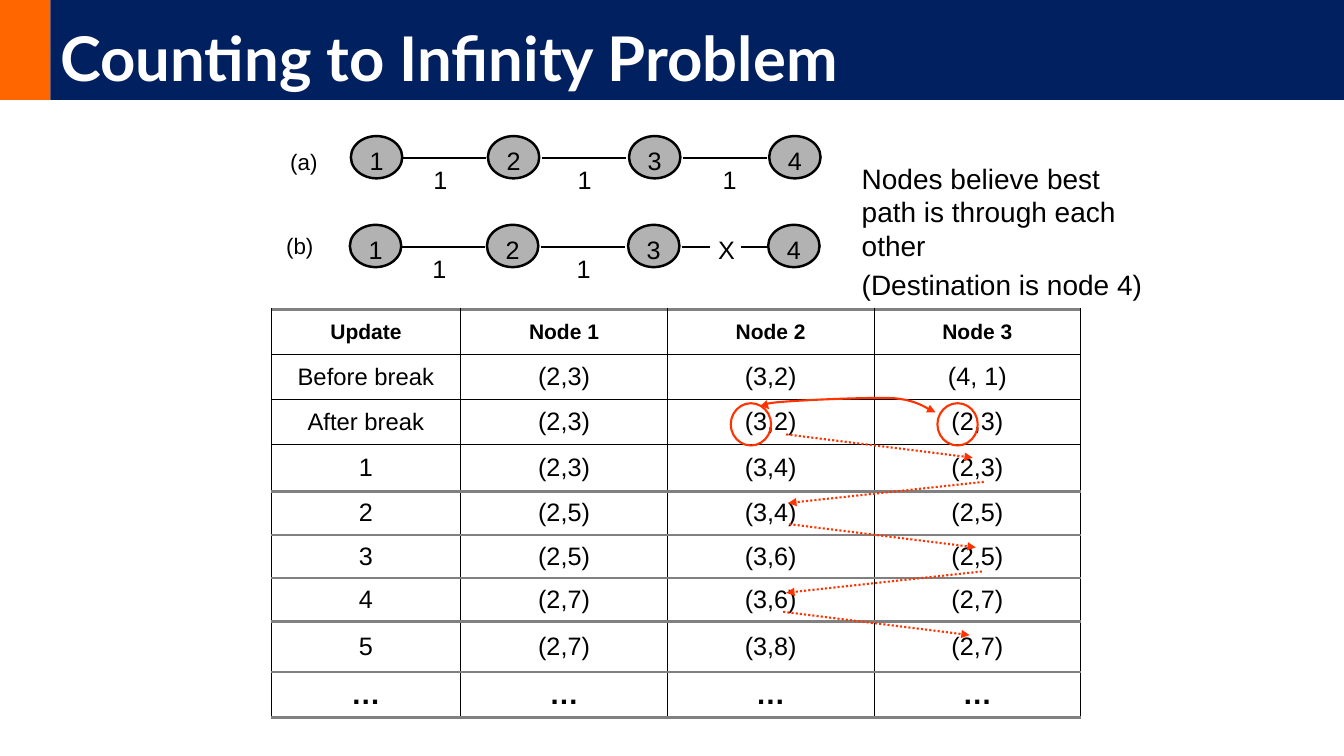
import pptx
import pptx.dml.color
import pptx.enum.dml
import pptx.enum.shapes
import pptx.enum.text
import pptx.oxml.ns
import pptx.util
from lxml import etree

Pt = pptx.util.Pt
RGB = pptx.dml.color.RGBColor
qn = pptx.oxml.ns.qn
SHAPE = pptx.enum.shapes.MSO_SHAPE
ANCHOR = pptx.enum.text.MSO_ANCHOR
ALIGN = pptx.enum.text.PP_ALIGN

BLACK = RGB(0x00, 0x00, 0x00)
WHITE = RGB(0xFF, 0xFF, 0xFF)
NAVY = RGB(0x00, 0x20, 0x60)
ORANGE = RGB(0xFF, 0x66, 0x00)
NODE_GREY = RGB(0xB2, 0xB2, 0xB2)
RULE_GREY = RGB(0x80, 0x80, 0x80)
RED = RGB(0xFF, 0x33, 0x00)

ROUTES = [
    ["Update", "Node 1", "Node 2", "Node 3"],
    ["Before break", "(2,3)", "(3,2)", "(4, 1)"],
    ["After break", "(2,3)", "(3,2)", "(2,3)"],
    ["1", "(2,3)", "(3,4)", "(2,3)"],
    ["2", "(2,5)", "(3,4)", "(2,5)"],
    ["3", "(2,5)", "(3,6)", "(2,5)"],
    ["4", "(2,7)", "(3,6)", "(2,7)"],
    ["5", "(2,7)", "(3,8)", "(2,7)"],
    ["…"] * 4,
]
COL_WIDTHS = [135.4] + [147.6] * 3
ROW_HEIGHTS = [32.1] * 3 + [33.8] + [31] * 3 + [36, 32.1]

NODE_X = [250.6, 348.5, 449.3, 549.4]
COST_X = [309.6, 412.6, 516.2]
LINKS = [(287.3, 347), (387.4, 447.1), (488.2, 547.9)]
BROKEN_LINKS = LINKS[:2] + [(488.2, 507.6), (529.9, 549.3)]

# Start point, then control, control, end for each Bezier curve
LOOP_START = (549.4, 292.3)
LOOP_CURVES = [
    [(545, 290.2), (541.4, 288.7), (555.8, 287.3)],
    [(571, 285.8), (619.9, 283.7), (637.9, 284.4)],
    [(656.6, 285.8), (663.1, 293), (668.2, 294.5)],
]
UPDATE_ARROWS = [
    (561.6, 310.3, 694.8, 326.9),
    (702.7, 344.2, 563, 359.3),
    (563.8, 374.4, 697, 391),
    (701.3, 408.2, 561.6, 423.4),
    (559.4, 437, 692.6, 453.6),
]


def write(tf, text, size=18, color=BLACK, font="Arial", bold=False,
          align=ALIGN.LEFT, before=0, spacing=None):
    """Fill a text frame, one paragraph for each line of text."""
    for i, line in enumerate(text.split("\n")):
        p = tf.add_paragraph() if i else tf.paragraphs[0]
        p.alignment = align
        p.space_before = Pt(before)
        if spacing:
            p.line_spacing = spacing
        r = p.add_run()
        r.text = line
        r.font.size = Pt(size)
        r.font.name = font
        r.font.bold = bold
        r.font.color.rgb = color


def bezier(start, c1, c2, end, steps=12):
    """Points along a cubic curve, without its start."""
    points = []
    for i in range(1, steps + 1):
        t = i / steps
        u = 1 - t
        weights = (u ** 3, 3 * u * u * t, 3 * u * t * t, t ** 3)
        points.append(tuple(sum(w * pt[axis] for w, pt in zip(weights, (start, c1, c2, end)))
                            for axis in (0, 1)))
    return points


class SlideBuilder:
    def __init__(self, slide, line_width=1.75, arrow_width=1.5):
        self.s = slide
        self.line_width = line_width
        self.arrow_width = arrow_width

    def style(self, sp, fill=None, line=None, width=1.0):
        sp.shadow.inherit = False
        if fill is None:
            sp.fill.background()
        else:
            sp.fill.solid()
            sp.fill.fore_color.rgb = fill
        if line is None:
            sp.line.fill.background()
        else:
            sp.line.color.rgb = line
            sp.line.width = Pt(width)

    def shape(self, kind, x, y, w, h, **style):
        sp = self.s.shapes.add_shape(kind, Pt(x), Pt(y), Pt(w), Pt(h))
        self.style(sp, **style)
        return sp

    def text(self, text, x, y, w, h, inset=True, wrap=True, **fmt):
        tf = self.s.shapes.add_textbox(Pt(x), Pt(y), Pt(w), Pt(h)).text_frame
        tf.word_wrap = wrap
        if not inset:
            tf.margin_left = tf.margin_right = tf.margin_top = tf.margin_bottom = 0
        write(tf, text, **fmt)

    def arrowheads(self, sp, *ends):
        for end in ends:
            etree.SubElement(sp.get_or_add_ln(), qn("a:" + end), type="triangle")

    def line(self, x1, y1, x2, y2):
        c = self.s.shapes.add_connector(pptx.enum.shapes.MSO_CONNECTOR.STRAIGHT,
                                        Pt(x1), Pt(y1), Pt(x2), Pt(y2))
        c.line.color.rgb = BLACK
        c.line.width = Pt(self.line_width)
        etree.SubElement(c._element.spPr, qn("a:effectLst"))
        return c

    def dotted_arrow(self, *ends):
        c = self.line(*ends)
        c.line.color.rgb = RED
        c.line.width = Pt(self.arrow_width)
        c.line.dash_style = pptx.enum.dml.MSO_LINE.ROUND_DOT
        self.arrowheads(c, "tailEnd")

    def curve(self, start, curves):
        points = [start]
        for c1, c2, end in curves:
            points += bezier(points[-1], c1, c2, end)
        (x, y), *rest = [(Pt(px), Pt(py)) for px, py in points]
        fb = self.s.shapes.build_freeform(x, y)
        fb.add_line_segments(rest, close=False)
        sp = fb.convert_to_shape()
        self.style(sp, line=RED, width=self.arrow_width)
        self.arrowheads(sp, "headEnd", "tailEnd")

    def node(self, number, x, y):
        sp = self.shape(SHAPE.OVAL, x, y, 36.7, 30.2,
                        fill=NODE_GREY, line=BLACK, width=self.line_width)
        tf = sp.text_frame
        tf.margin_left = tf.margin_right = tf.margin_bottom = 0
        tf.margin_top = Pt(2)
        tf.vertical_anchor = ANCHOR.TOP
        tf.word_wrap = False
        write(tf, str(number), align=ALIGN.CENTER)

    def network(self, links, costs, dx=0, dy=0):
        for number, x in enumerate(NODE_X, 1):
            self.node(number, x + dx, 97.2 + dy)
        for x1, x2 in links:
            self.line(x1 + dx, 113 + dy, x2 + dx, 113 + dy)
        for x, cost in zip(COST_X, costs):
            broken = cost == "X"
            self.text(cost, x + dx - 2.5 * broken, 117.4 + dy - 13.7 * broken, 10 + 2 * broken, 21,
                      inset=False, wrap=False)

    def border(self, cell, side, color, width):
        ln = etree.SubElement(cell._tc.get_or_add_tcPr(), qn("a:ln" + side), w=str(Pt(width)))
        fill = etree.SubElement(ln, qn("a:solidFill"))
        etree.SubElement(fill, qn("a:srgbClr"), val=str(color))

    def table(self, rows, x, y, widths, heights):
        tbl = self.s.shapes.add_table(len(rows), len(widths), Pt(x), Pt(y),
                                      Pt(sum(widths)), Pt(sum(heights))).table
        tbl.first_row = tbl.horz_banding = False
        for col, width in zip(tbl.columns, widths):
            col.width = Pt(width)
        thin, thick = (BLACK, 0.75), (RULE_GREY, 2)
        rules = [thick] + [thin] * 3 + [thick] * (len(rows) - 3)
        for i, values in enumerate(rows):
            tbl.rows[i].height = Pt(heights[i])
            for j, value in enumerate(values):
                cell = tbl.cell(i, j)
                for side, rule in zip("LRTB", (thin, thin, rules[i], rules[i + 1])):
                    self.border(cell, side, *rule)
                cell.fill.background()
                cell.vertical_anchor = ANCHOR.MIDDLE
                size = {0: 15, len(rows) - 1: 21}.get(i, 17 if value.endswith("break") else 18)
                write(cell.text_frame, value, size=size, bold=i in (0, len(rows) - 1),
                      align=ALIGN.CENTER)


def main():
    prs = pptx.Presentation()
    prs.slide_width, prs.slide_height = Pt(960), Pt(540)
    b = SlideBuilder(prs.slides.add_slide(prs.slide_layouts[6]))

    b.shape(SHAPE.RECTANGLE, 0, 0, 36, 71.3, fill=ORANGE)
    title = b.shape(SHAPE.RECTANGLE, 36, 0, 924, 71.3, fill=NAVY).text_frame
    title.vertical_anchor = ANCHOR.BOTTOM
    write(title, "Counting to Infinity Problem", size=44, font="Lato",
          color=WHITE, bold=True, spacing=0.9)

    b.network(LINKS, "111")
    b.network(BROKEN_LINKS, "11X", dx=-0.7, dy=63.4)
    b.text("(a)", 200.2, 102.2, 37.4, 26.6, size=16)
    b.text("(b)", 197.3, 162, 37.4, 26.6, size=16)

    b.table(ROUTES, 193.7, 221, COL_WIDTHS, ROW_HEIGHTS)
    b.text("Nodes believe best path is through each other\n(Destination is node 4)",
           608.4, 111.6, 217.4, 108, size=20, before=4)

    for x in (522, 669.6):
        b.shape(SHAPE.OVAL, x, 288, 28.8, 30.2, line=RED, width=b.arrow_width)
    b.curve(LOOP_START, LOOP_CURVES)
    for ends in UPDATE_ARROWS:
        b.dotted_arrow(*ends)

    prs.save("out.pptx")


if __name__ == "__main__":
    main()
